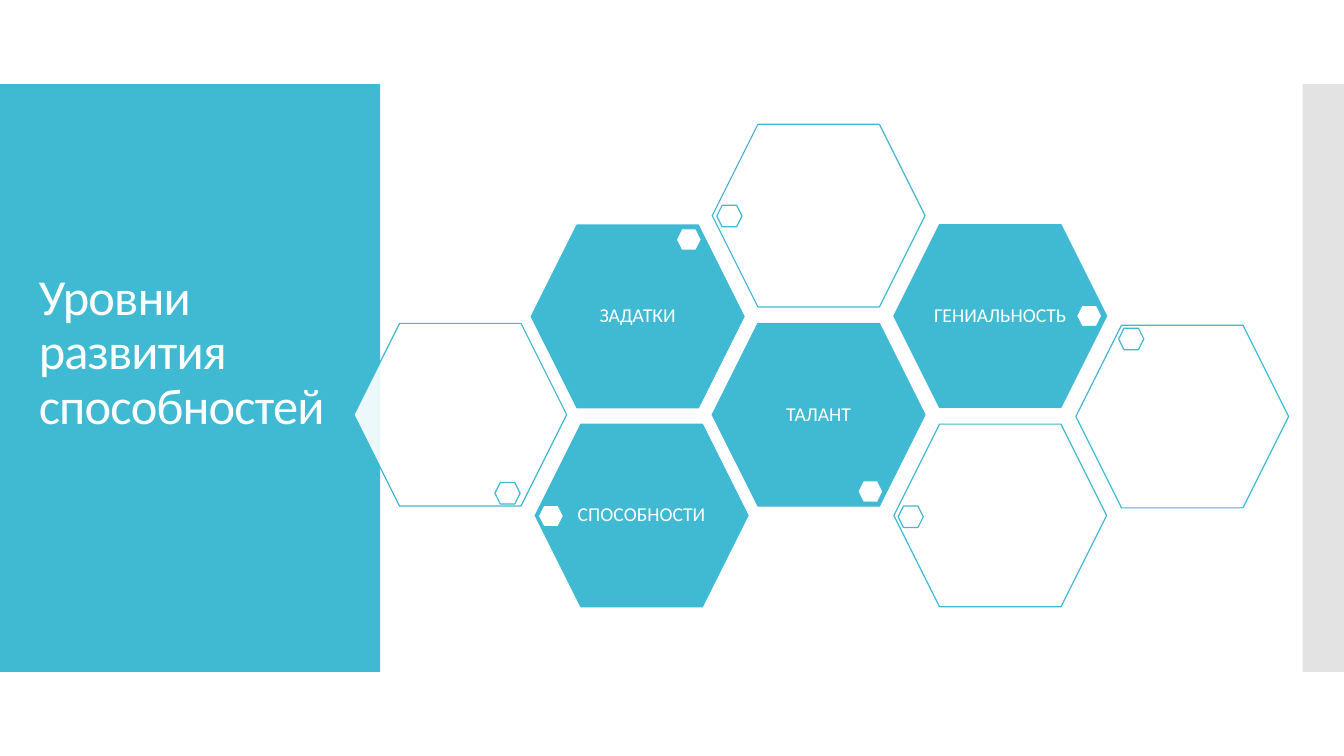
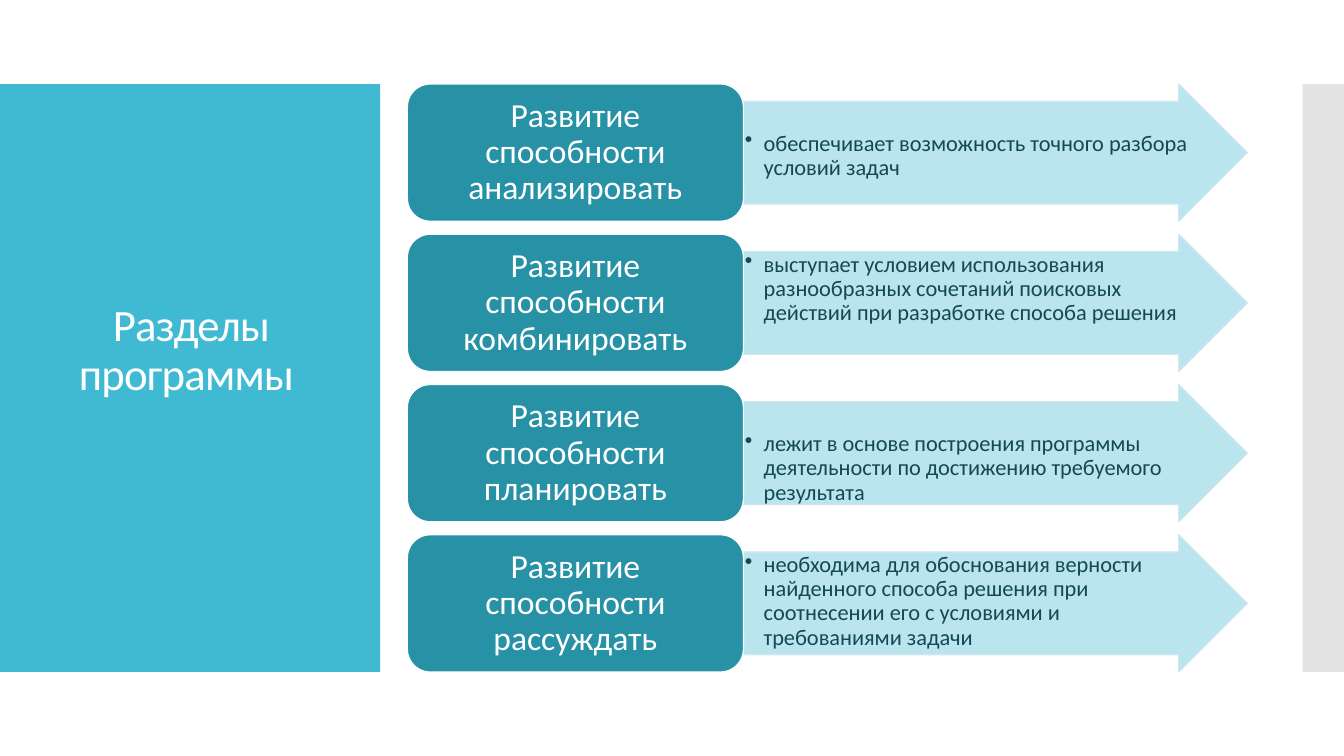
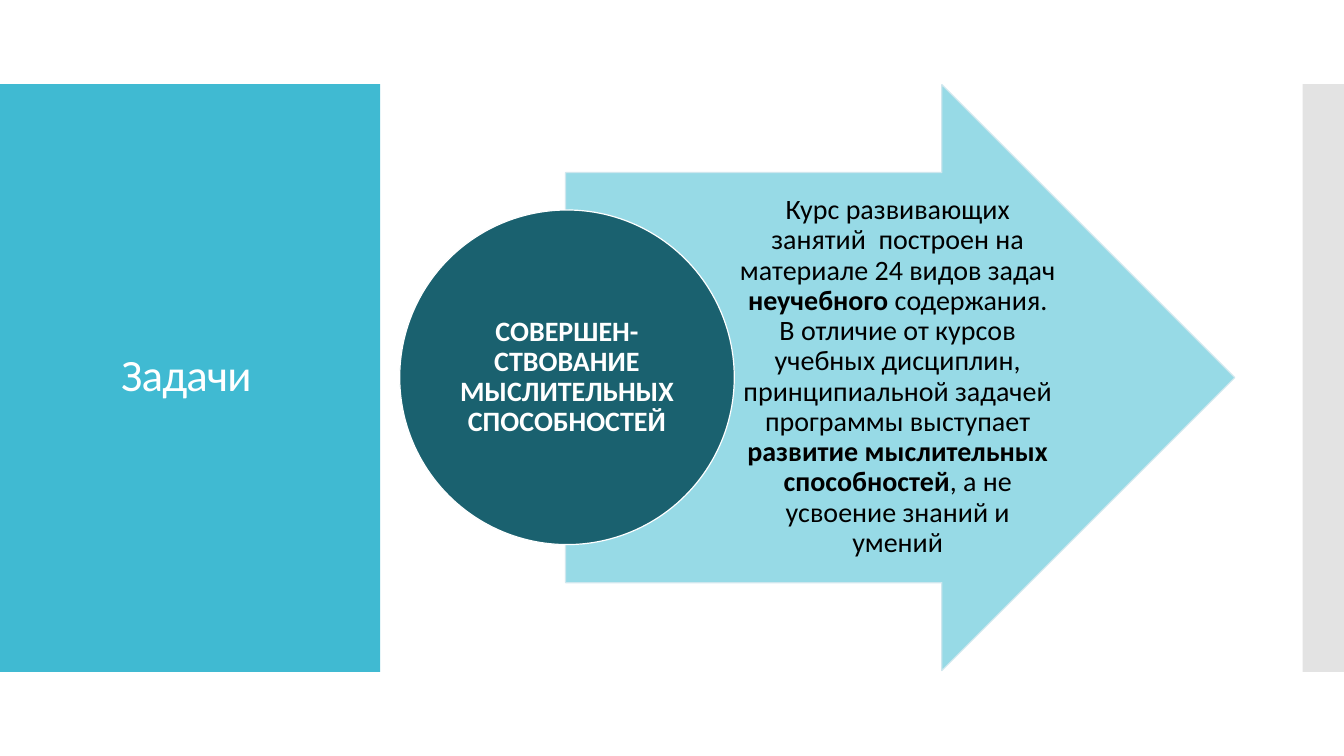
import lxml.etree
import pptx
import pptx.util
import pptx.dml.color
import pptx.enum.shapes
import pptx.enum.text
import pptx.oxml.ns

Pt = pptx.util.Pt
SHAPE = pptx.enum.shapes.MSO_SHAPE
ALIGN = pptx.enum.text.PP_ALIGN
ANCHOR = pptx.enum.text.MSO_ANCHOR
qn = pptx.oxml.ns.qn

# Shared look
FONT = "Calibri"
TEAL, WHITE, GREY, BLACK = "40BAD2", "FFFFFF", "C8C8C8", "000000"
DARK_TEAL, DEEP_TEAL, INK = "2791A6", "1A616F", "144954"
PALE, LIGHT, PALE_EDGE = "B3E3ED", "8CD6E4", "CFE7EE"
WIDTH, HEIGHT = 960, 540
BAND_TOP, BAND_HEIGHT = 60, 420

# Slide 1: left, top, label, left and top of the small hexagon
HEX_SIZE, DOT_SIZE = (152, 130.5), (18, 15.3)
HEXAGONS = [
    (382.3, 303, "СПОСОБНОСТИ", 384.5, 361),
    (252.8, 231, "", 353.5, 344.7),
    (508.8, 231, "ТАЛАНТ", 612.7, 343.5),
    (638.5, 303, "", 641.5, 361.5),
    (379.5, 160.8, "ЗАДАТКИ", 483, 163.5),
    (508.8, 88.8, "", 512, 146.7),
    (638.5, 160.5, "ГЕНИАЛЬНОСТЬ", 769, 218),
    (768.5, 232.3, "", 799, 234.5),
]

# Slide 2: ability, its role, space above the role text
SECTIONS = [
    ("анализировать", "обеспечивает возможность точного разбора условий задач", 22),
    ("комбинировать", "выступает условием использования разнообразных сочетаний "
     "поисковых действий при разработке способа решения", 1),
    ("планировать", "лежит в основе построения программы деятельности по "
     "достижению требуемого результата", 22),
    ("рассуждать", "необходима для обоснования верности найденного способа решения "
     "при соотнесении его с условиями и требованиями задачи", 1),
]

# Slide 3: runs of the course text with their weight
COURSE = [
    ("Курс развивающих занятий  построен на материале 24 видов задач ", False),
    ("неучебного ", True),
    ("содержания. В отличие от курсов учебных дисциплин, принципиальной "
     "задачей программы выступает ", False),
    ("развитие мыслительных способностей", True),
    (", а не усвоение знаний и умений", False),
]


def rgb(value):
    return pptx.dml.color.RGBColor.from_string(value)


def apply(obj, values):
    for name, value in values.items():
        setattr(obj, name, value)


def put_text(sp, runs, size, color, align=ALIGN.CENTER, anchor=ANCHOR.MIDDLE,
             margins=(0, 0, 0, 0), wrap=True):
    """Fill the one paragraph of a shape; margins are left, top, right, bottom."""
    tf = sp.text_frame
    left, top, right, bottom = margins
    apply(tf, {"word_wrap": wrap, "vertical_anchor": anchor,
               "auto_size": pptx.enum.text.MSO_AUTO_SIZE.NONE,
               "margin_left": Pt(left), "margin_top": Pt(top),
               "margin_right": Pt(right), "margin_bottom": Pt(bottom)})
    p = tf.paragraphs[0]
    apply(p, {"alignment": align, "line_spacing": 0.9})
    for text, bold in runs:
        r = p.add_run()
        r.text = text
        apply(r.font, {"name": FONT, "size": Pt(size), "bold": bold})
        r.font.color.rgb = rgb(color)
    return p


def add_shape(s, kind, box, fill, line=None, opacity=100, adjust=()):
    sp = s.shapes.add_shape(kind, *map(Pt, box))
    sp.shadow.inherit = False
    for i, value in enumerate(adjust):
        sp.adjustments[i] = value
    sp.fill.solid()
    sp.fill.fore_color.rgb = rgb(fill)
    if opacity < 100:
        color = sp.element.spPr.find(qn("a:solidFill")).find(qn("a:srgbClr"))
        lxml.etree.SubElement(color, qn("a:alpha"), val=str(opacity * 1000))
    if line:
        sp.line.color.rgb = rgb(line)
        sp.line.width = Pt(0.85)
    else:
        sp.line.fill.background()
    return sp


def add_bullet(p, indent):
    pPr = p._p.get_or_add_pPr()
    pPr.set("marL", str(int(Pt(indent))))
    pPr.set("indent", str(-int(Pt(indent))))
    lxml.etree.SubElement(pPr, qn("a:buChar"), char="•")


def add_bands(s):
    """Draw the side bands and move them to the layout, behind its placeholders."""
    bands = [((0, BAND_TOP, 271.5, BAND_HEIGHT), TEAL, 100),
             ((930.5, BAND_TOP, WIDTH - 930.5, BAND_HEIGHT), GREY, 50)]
    for box, fill, opacity in bands:
        sp = add_shape(s, SHAPE.RECTANGLE, box, fill, opacity=opacity)
        s.slide_layout.shapes.element.insert(2, sp.element)


def add_slide(prs, title, top, size=32, align=ALIGN.CENTER):
    s = prs.slides.add_slide(prs.slide_layouts[5])
    sp = s.shapes.title
    apply(sp, {"left": Pt(20.5), "top": Pt(top), "width": Pt(232), "height": Pt(362)})
    p = put_text(sp, [(title, False)], size, WHITE, align, margins=(7.2, 3.6, 7.2, 3.6))
    p.runs[0]._r.get_or_add_rPr().set("spc", "-60")
    return s


def build_levels(prs):
    s = add_slide(prs, "Уровни развития способностей", 71.5, 36, ALIGN.LEFT)
    add_bands(s)
    for left, top, label, dot_left, dot_top in HEXAGONS:
        sp = add_shape(s, SHAPE.HEXAGON, (left, top, *HEX_SIZE),
                       TEAL if label else WHITE, TEAL, 100 if label else 90)
        if label:
            put_text(sp, [(label, False)], 14, WHITE, wrap=False)
        add_shape(s, SHAPE.HEXAGON, (dot_left, dot_top, *DOT_SIZE), WHITE, TEAL)


def build_sections(prs):
    s = add_slide(prs, "Разделы программы ", 70)
    height = 98
    pitch = (BAND_HEIGHT - height) / (len(SECTIONS) - 1)
    for i, (ability, role, space) in enumerate(SECTIONS):
        top = BAND_TOP + i * pitch
        arrow = add_shape(s, SHAPE.RIGHT_ARROW, (531, top, 360, height),
                          PALE, PALE_EDGE, 90, (0.75, 0.5))
        p = put_text(arrow, [(role, False)], 16, INK, ALIGN.LEFT, ANCHOR.TOP,
                     (1, space, 1, 1))
        add_bullet(p, 13.5)
        card = add_shape(s, SHAPE.ROUNDED_RECTANGLE, (291, top, 240, height),
                         DARK_TEAL, WHITE)
        put_text(card, [("Развитие способности " + ability, False)], 24, WHITE,
                 margins=(7.2, 3.6, 7.2, 3.6))


def build_tasks(prs):
    s = add_slide(prs, "Задачи ", 88.5)
    add_shape(s, SHAPE.RIGHT_ARROW, (404, 60.5, 478, 418.5),
              LIGHT, PALE_EDGE, 90, (0.7, 0.5))
    course = s.shapes.add_textbox(*map(Pt, (523.5, 123, 233.5, 292.5)))
    put_text(course, COURSE, 20, BLACK, margins=(4, 1, 2, 1))
    circle = add_shape(s, SHAPE.OVAL, (285.5, 150, 239, 239), DEEP_TEAL, WHITE)
    put_text(circle, [("СОВЕРШЕН-СТВОВАНИЕ МЫСЛИТЕЛЬНЫХ СПОСОБНОСТЕЙ", True)],
             20, WHITE, margins=(1, 1, 1, 1))


def main():
    prs = pptx.Presentation()
    apply(prs, {"slide_width": Pt(WIDTH), "slide_height": Pt(HEIGHT)})
    build_levels(prs)
    build_sections(prs)
    build_tasks(prs)
    prs.save("out.pptx")


if __name__ == "__main__":
    main()
